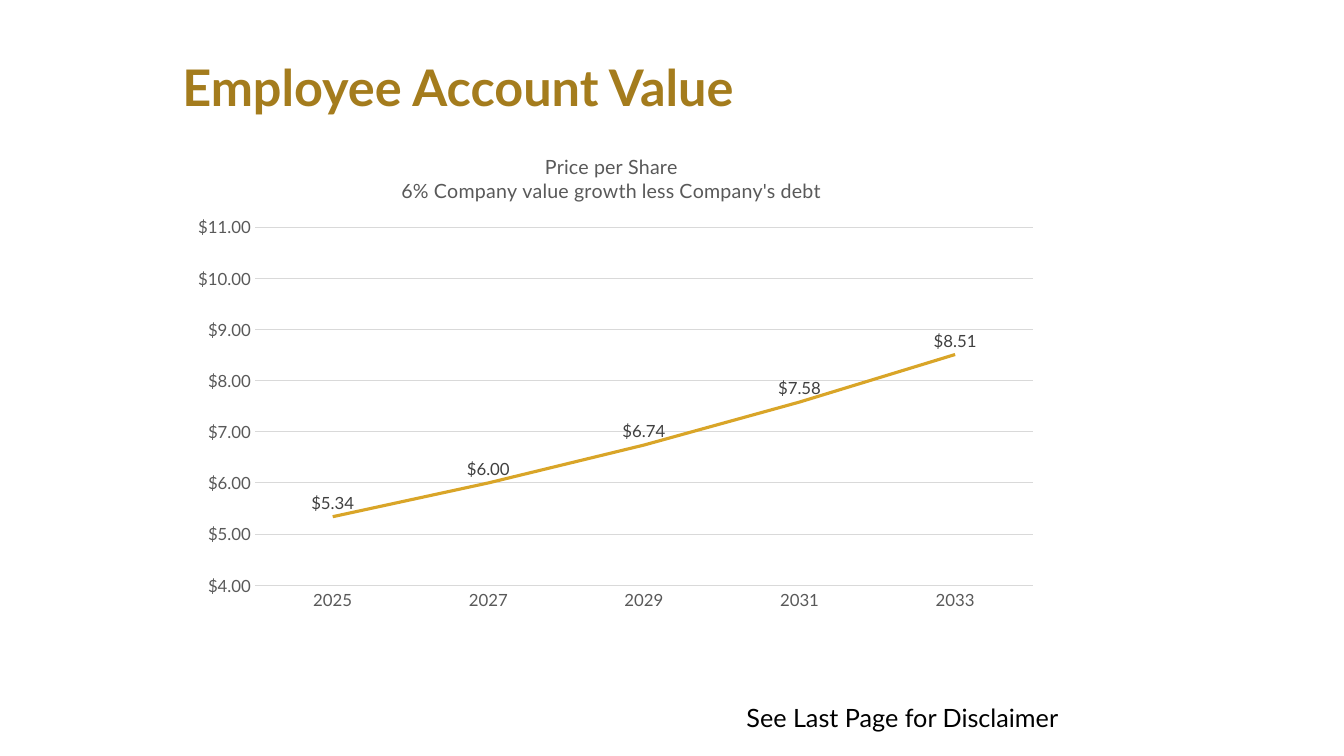
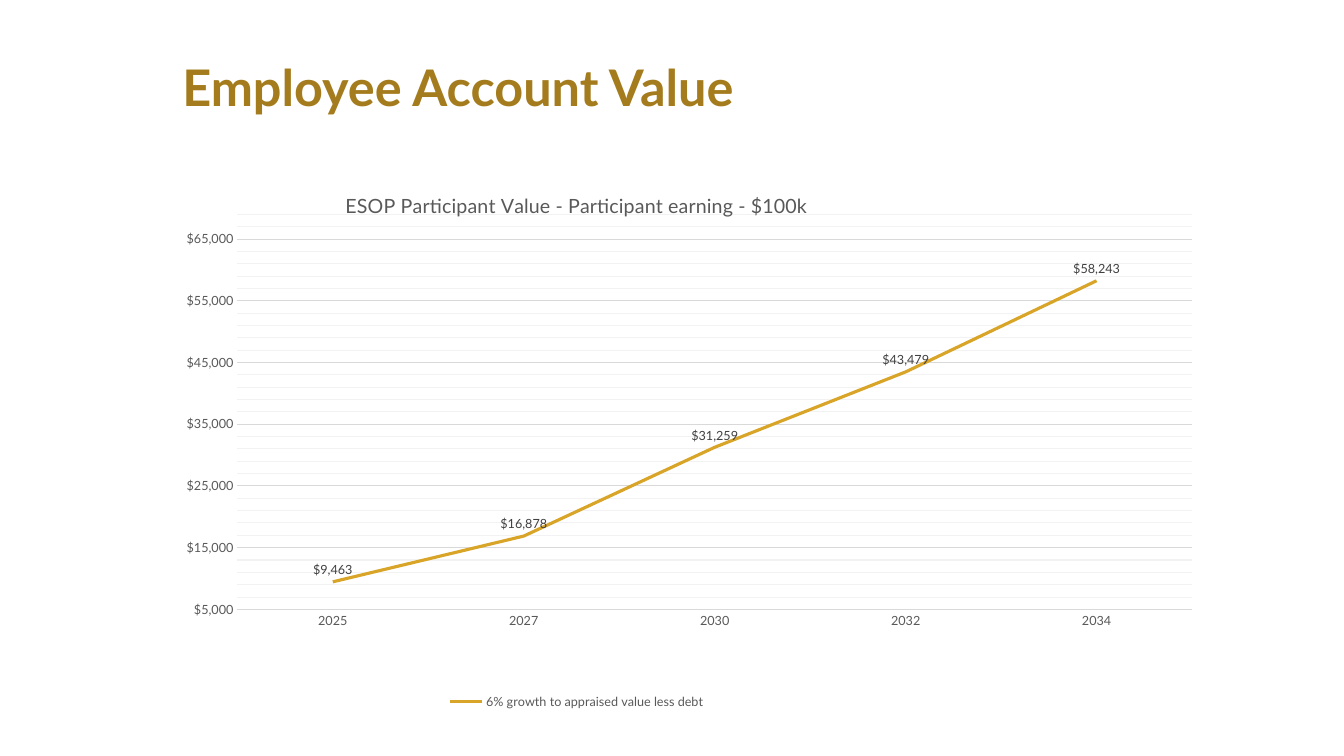
from copy import deepcopy

from lxml import etree
from pptx import Presentation
from pptx.chart.data import CategoryChartData
from pptx.dml.color import RGBColor
from pptx.enum.chart import (XL_CHART_TYPE, XL_LABEL_POSITION,
                             XL_LEGEND_POSITION, XL_TICK_MARK)
from pptx.enum.text import PP_ALIGN
from pptx.oxml.ns import qn
from pptx.util import Pt

PX = 9144
FONT = "Lato"
TITLE_GOLD = RGBColor(0xA4, 0x7C, 0x1D)
LINE_GOLD = RGBColor(0xD9, 0xA5, 0x28)
BLACK = RGBColor(0, 0, 0)
GREY = RGBColor(0x59, 0x59, 0x59)
LABEL_GREY = RGBColor(0x40, 0x40, 0x40)
GRID = RGBColor(0xD9, 0xD9, 0xD9)
MINOR_GRID = RGBColor(0xF2, 0xF2, 0xF2)
LINE = XL_CHART_TYPE.LINE
ABOVE = XL_LABEL_POSITION.ABOVE
BOTTOM = XL_LEGEND_POSITION.BOTTOM
NO_TICK = XL_TICK_MARK.NONE
LEFT, CENTER = PP_ALIGN.LEFT, PP_ALIGN.CENTER


def px(*lengths):
    """Turn px lengths into EMU."""
    return [n * PX for n in lengths]


def style_font(font, size, color, bold=False):
    """Apply the deck font with a size and colour."""
    font.name = FONT
    font.size = Pt(size)
    font.bold = bold
    font.color.rgb = color


def style_line(line, color, width=0.75):
    """Give a line its colour and width."""
    line.color.rgb = color
    line.width = Pt(width)


def add_text(slide, box, text, size, color, bold=False, align=LEFT, top=5):
    """Add a one-paragraph text box."""
    tf = slide.shapes.add_textbox(*px(*box)).text_frame
    tf.word_wrap = True
    tf.margin_top = top * PX
    p = tf.paragraphs[0]
    p.text = text
    p.alignment = align
    style_font(p.font, size, color, bold)
    return p


def add_titled_slide(prs):
    """Add a blank slide with the shared title."""
    slide = prs.slides.add_slide(prs.slide_layouts[6])
    p = add_text(slide, (171, 42, 1055, 145), "Employee Account Value",
                 36, TITLE_GOLD, bold=True, top=20)
    p.line_spacing = 0.9
    return slide


def set_plot_layout(chart, plot):
    """Fix the inner plot area as fractions of the chart."""
    area = chart.element.find(".//" + qn("c:plotArea"))
    for old in area.findall(qn("c:layout")):
        area.remove(old)
    layout = etree.Element(qn("c:layout"))
    manual = etree.SubElement(layout, qn("c:manualLayout"))
    settings = [("layoutTarget", "inner"), ("xMode", "edge"), ("yMode", "edge")]
    for tag, value in settings + list(zip("xywh", plot)):
        etree.SubElement(manual, qn("c:" + tag)).set("val", str(value))
    area.insert(0, layout)


def add_minor_grid(chart, unit, color):
    """Add minor gridlines that follow the major ones in a paler colour."""
    axis = chart.value_axis
    axis.minor_unit = unit
    axis.has_minor_gridlines = True
    major = chart.element.find(".//" + qn("c:majorGridlines"))
    minor = chart.element.find(".//" + qn("c:minorGridlines"))
    minor.append(deepcopy(major.find(qn("c:spPr"))))
    minor.find(".//" + qn("a:srgbClr")).set("val", str(color))


def style_axes(chart, size, scale, number_format):
    """Style both axes and the value scale."""
    for axis in (chart.category_axis, chart.value_axis):
        axis.major_tick_mark = axis.minor_tick_mark = NO_TICK
        style_font(axis.tick_labels.font, size, GREY)
    style_line(chart.category_axis.format.line, GRID)
    axis = chart.value_axis
    axis.minimum_scale, axis.maximum_scale, axis.major_unit = scale
    axis.format.line.fill.background()
    axis.has_major_gridlines = True
    style_line(axis.major_gridlines.format.line, GRID)
    axis.tick_labels.number_format = number_format
    axis.tick_labels.number_format_is_linked = False


def add_line_chart(slide, box, title, name, points, size, scale,
                   number_format, plot):
    """Add a single-series line chart with value labels."""
    data = CategoryChartData()
    data.categories = list(points)
    data.add_series(name, list(points.values()))
    chart = slide.shapes.add_chart(LINE, *px(*box), data).chart
    style_font(chart.font, size, BLACK)
    chart.has_legend = False
    chart.has_title = True
    tf = chart.chart_title.text_frame
    tf.text = title
    for p in tf.paragraphs:
        style_font(p.font, 14, GREY)
    style_axes(chart, size, scale, number_format)
    set_plot_layout(chart, plot)
    chart.plots[0].vary_by_categories = False
    series = chart.plots[0].series[0]
    series.smooth = False
    style_line(series.format.line, LINE_GOLD, 2.25)
    labels = series.data_labels
    labels.show_value = True
    labels.position = ABOVE
    labels.number_format = number_format
    labels.number_format_is_linked = False
    style_font(labels.font, size, LABEL_GREY)
    return chart


def build_share_price(prs):
    """Build the price per share slide."""
    slide = add_titled_slide(prs)
    add_text(slide, (631, 692, 528, 40), "See Last Page for Disclaimer",
             18, BLACK, align=CENTER)
    points = {"2025": 5.34, "2027": 6.00, "2029": 6.74, "2031": 7.58,
              "2033": 8.51}
    title = "Price per Share\n6% Company value growth less Company's debt"
    add_line_chart(slide, (171, 133, 871, 481), title, "Series 1", points,
                   12, (4, 11, 1), '"$"#,##0.00', (0.094, 0.192, 0.886, 0.739))


def build_participant_value(prs):
    """Build the participant value slide."""
    slide = add_titled_slide(prs)
    points = {"2025": 9463, "2027": 16878, "2030": 31259, "2032": 43479,
              "2034": 58243}
    chart = add_line_chart(
        slide, (-56, 170, 1256, 538),
        "ESOP Participant Value - Participant earning - $100k",
        "6% growth to appraised value less debt", points,
        9, (5000, 70000, 10000), '"$"#,##0', (0.232, 0.068, 0.754, 0.74))
    add_minor_grid(chart, 2000, MINOR_GRID)
    chart.has_legend = True
    chart.legend.position = BOTTOM
    chart.legend.include_in_layout = False
    style_font(chart.legend.font, 9, GREY)


def main():
    """Build and save the deck."""
    prs = Presentation()
    prs.slide_width, prs.slide_height = px(1333, 750)
    build_share_price(prs)
    build_participant_value(prs)
    prs.save("out.pptx")


if __name__ == "__main__":
    main()
